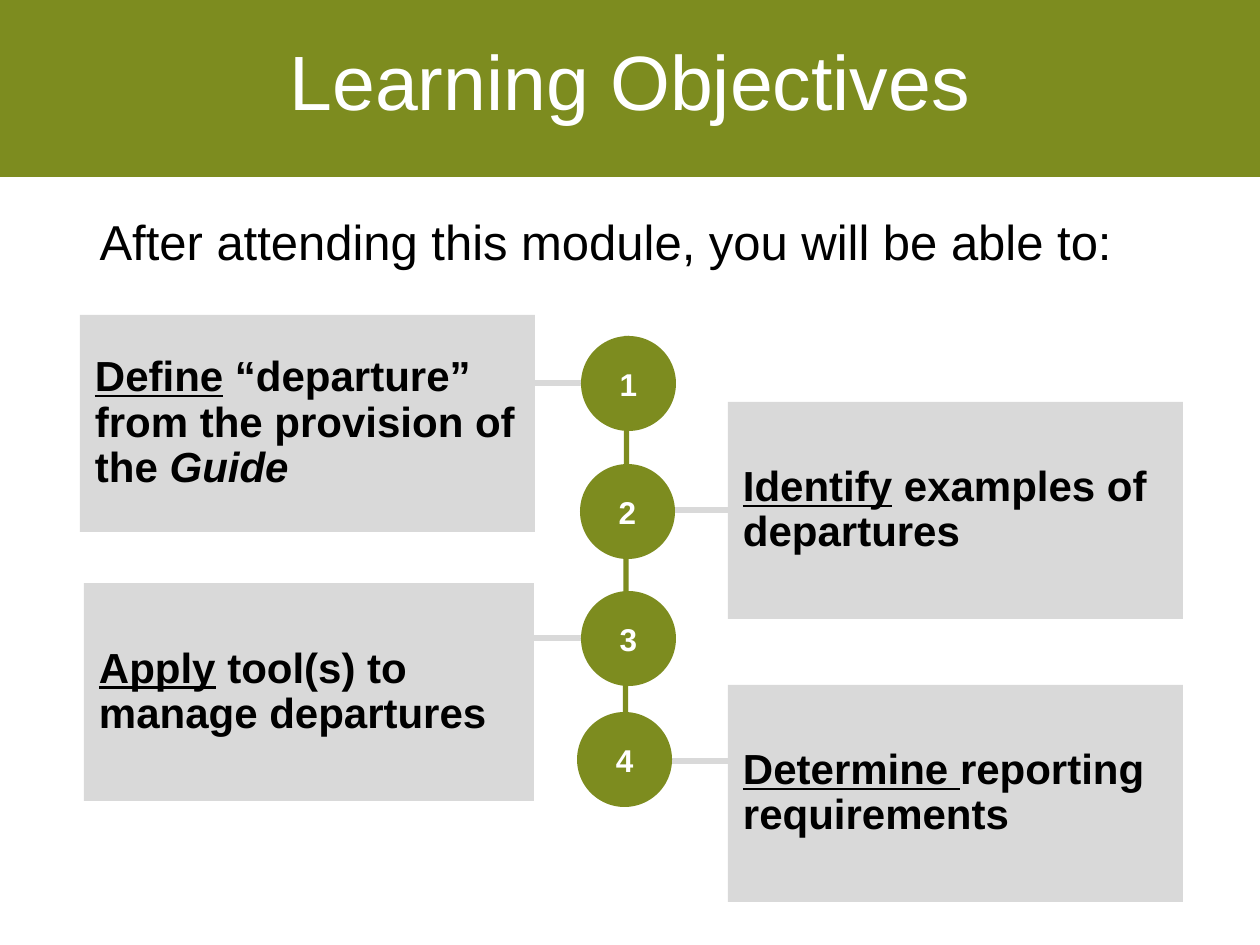
from lxml.etree import SubElement
from pptx import Presentation
from pptx.dml.color import RGBColor
from pptx.enum.shapes import MSO_CONNECTOR, MSO_SHAPE
from pptx.enum.text import MSO_ANCHOR as ANCHOR, MSO_AUTO_SIZE, PP_ALIGN as ALIGN
from pptx.oxml.ns import qn
from pptx.util import Emu, Pt

OLIVE = RGBColor(0x7D, 0x8C, 0x1F)
GREY = RGBColor(0xD9, 0xD9, 0xD9)
WHITE = RGBColor(0xFF, 0xFF, 0xFF)
BLACK = RGBColor(0, 0, 0)
FONT = "Arial"
DIAMETER = 95

OBJECTIVES = [
    ((80, 315, 455, 217), (581, 336), 383,
     [("Define", "u"), (" “departure” from the provision of the ", ""), ("Guide", "i")]),
    ((728, 402, 455, 217), (580, 464), 510,
     [("Identify", "u"), (" examples of departures", "")]),
    ((84, 583, 450, 218), (581, 591), 638,
     [("Apply", "u"), (" tool(s) to manage departures", "")]),
    ((728, 685, 455, 217), (577, 712), 761,
     [("Determine ", "u"), ("reporting requirements", "")]),
]


def px(n):
    return Emu(round(n * 914400 / 126))


def place(sp, box):
    sp.left, sp.top, sp.width, sp.height = map(px, box)


def style(p, size, color, align, bold=False):
    p.alignment = align
    p.font.name = FONT
    p.font.size = Pt(size)
    p.font.bold = bold
    p.font.color.rgb = color


def add_solid(slide, kind, box, color):
    sp = slide.shapes.add_shape(kind, *map(px, box))
    sp.shadow.inherit = False
    sp.fill.solid()
    sp.fill.fore_color.rgb = color
    sp.line.fill.background()
    sp.text_frame.vertical_anchor = ANCHOR.MIDDLE
    return sp


def add_line(slide, start, end, color):
    line = slide.shapes.add_connector(MSO_CONNECTOR.STRAIGHT, *map(px, start + end))
    line.line.color.rgb = color
    line.line.width = Pt(3)
    SubElement(line._element.spPr, qn("a:effectLst"))


def add_card(slide, box, runs):
    tf = add_solid(slide, MSO_SHAPE.RECTANGLE, box, GREY).text_frame
    tf.word_wrap = True
    tf.margin_left = px(15)
    p = tf.paragraphs[0]
    style(p, 24, BLACK, ALIGN.LEFT, bold=True)
    p.line_spacing = 0.9
    p.space_before = Pt(7.5)
    for text, mark in runs:
        r = p.add_run()
        r.text = text
        if mark == "u":
            r.font.underline = True
        elif mark == "i":
            r.font.italic = True


def add_badge(slide, left, top, number):
    sp = add_solid(slide, MSO_SHAPE.OVAL, (left, top, DIAMETER, DIAMETER), OLIVE)
    p = sp.text_frame.paragraphs[0]
    p.text = str(number)
    style(p, 18, WHITE, ALIGN.CENTER, bold=True)


def fill_placeholder(sp, box, text, size, color, align, anchor):
    place(sp, box)
    tf = sp.text_frame
    tf.auto_size = MSO_AUTO_SIZE.NONE
    tf.word_wrap = True
    tf.vertical_anchor = anchor
    p = tf.paragraphs[0]
    p.text = text
    style(p, size, color, align)
    p.line_spacing = 0.9
    return p


def add_title(slide):
    sp = slide.shapes.title
    fill_placeholder(sp, (0, -6, 1260, 183), "Learning Objectives",
                     44, WHITE, ALIGN.CENTER, ANCHOR.MIDDLE)
    sp.fill.solid()
    sp.fill.fore_color.rgb = OLIVE


def add_intro(slide):
    p = fill_placeholder(slide.placeholders[1], (87, 181, 1173, 96),
                         "After attending this module, you will be able to:",
                         28, BLACK, ALIGN.LEFT, ANCHOR.BOTTOM)
    p.space_before = Pt(7.5)
    pPr = p._p.get_or_add_pPr()
    pPr.set("marL", "0")
    pPr.set("indent", "0")
    pPr.insert_element_before(pPr.makeelement(qn("a:buNone"), {}),
                              "a:tabLst", "a:defRPr", "a:extLst")


def main():
    prs = Presentation()
    prs.slide_width, prs.slide_height = px(1260), px(945)
    slide = prs.slides.add_slide(prs.slide_layouts[1])
    add_title(slide)
    add_intro(slide)
    add_line(slide, (627, 336), (625, 806), OLIVE)
    for number, (card, (left, top), y, runs) in enumerate(OBJECTIVES, 1):
        edge = card[0] + card[2] if card[0] < left else card[0]
        add_card(slide, card, runs)
        add_line(slide, (edge, y), (left + DIAMETER // 2, y), GREY)
        add_badge(slide, left, top, number)
    prs.save("out.pptx")


if __name__ == "__main__":
    main()
